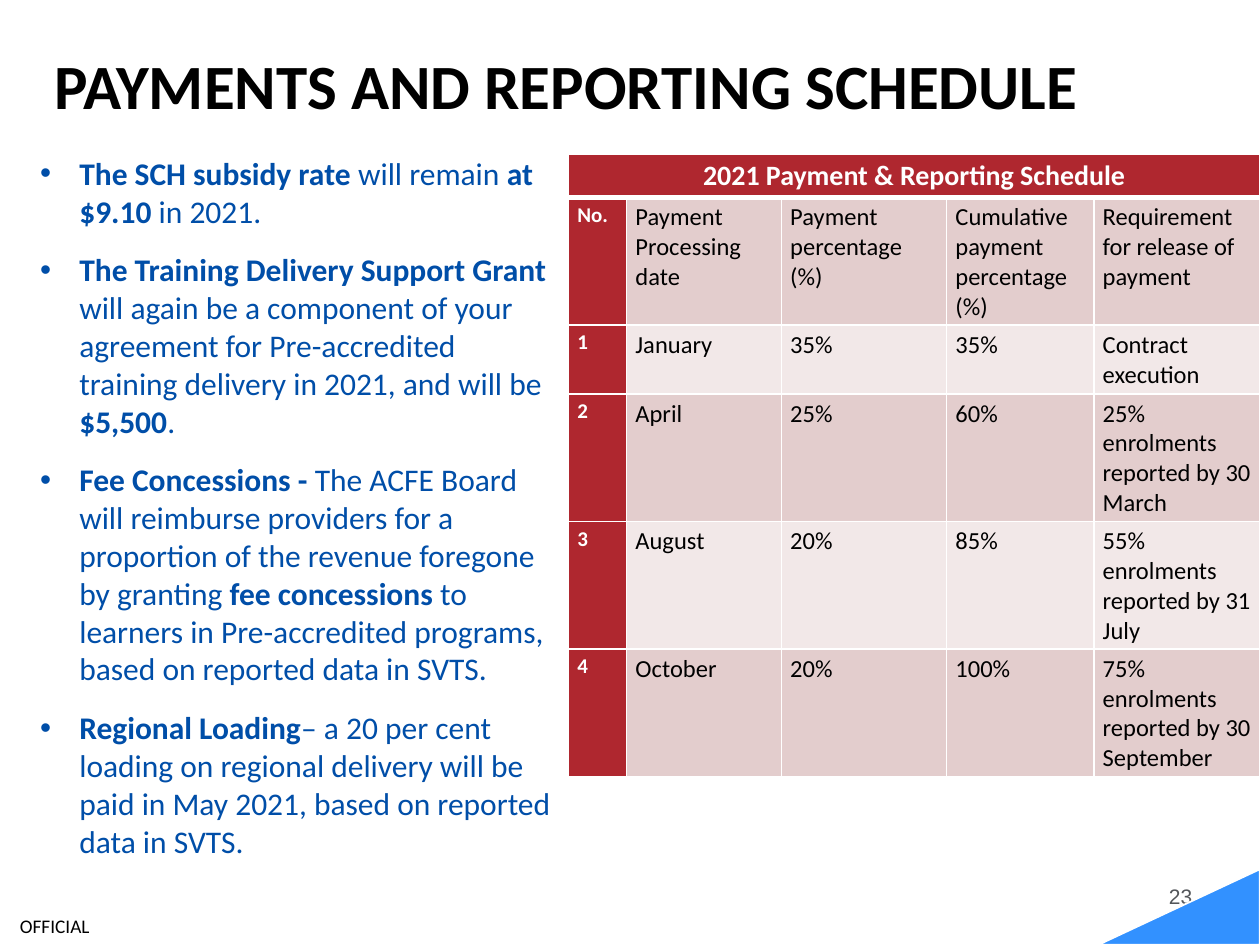
from itertools import cycle

from lxml import etree
from pptx import Presentation
from pptx import util as u
from pptx.dml import color
from pptx.enum import shapes, text
from pptx.oxml import ns

BLACK, WHITE, GREY = "000000", "FFFFFF", "53565A"
BLUE, SKY, RED = "004EA8", "3291FF", "AF272F"
BANDS = ("E3CDCD", "F2E8E8")
LEFT, CENTER = text.PP_ALIGN.LEFT, text.PP_ALIGN.CENTER
TOP, MIDDLE = text.MSO_ANCHOR.TOP, text.MSO_ANCHOR.MIDDLE

# Text styles of the table cells
HEADING = {"size": 16, "fill": WHITE, "bold": True, "align": CENTER}
NUMBER = {"size": 12, "fill": WHITE, "bold": True}
BODY = {"size": 14}

# Runs alternate between bold and regular, starting with bold
BULLETS = [
    ["The SCH subsidy rate ", "will remain ", "at $9.10 ", "in 2021."],
    ["The Training Delivery Support Grant ",
     "will again be a component of your agreement for Pre-accredited "
     "training delivery in 2021, and will be ", "$5,500", "."],
    ["Fee Concessions - ",
     "The ACFE Board will reimburse providers for a proportion of the "
     "revenue foregone by granting ", "fee concessions",
     " to learners in Pre-accredited programs, based on reported data in SVTS."],
    ["Regional Loading",
     "– a 20 per cent loading on regional delivery will be paid in May 2021, "
     "based on reported data in SVTS."],
]

SCHEDULE = [
    ["No.", "Payment Processing date", "Payment percentage (%)",
     "Cumulative payment percentage (%)", "Requirement for release of payment"],
    ["1", "January", "35%", "35%", "Contract execution"],
    ["2", "April", "25%", "60%", "25% enrolments reported by 30 March"],
    ["3", "August", "20%", "85%", "55% enrolments reported by 31 July"],
    ["4", "October", "20%", "100%", "75% enrolments reported by 30 September"],
]


def rgb(value):
    return color.RGBColor.from_string(value)


def add_text(p, words, size=18, fill=BLACK, bold=False, font="Calibri", align=LEFT):
    p.alignment = align
    r = p.add_run()
    r.text = words
    r.font.name, r.font.size, r.font.bold = font, u.Pt(size), bold
    r.font.color.rgb = rgb(fill)


def add_bullet(p, indent):
    pPr = p._p.get_or_add_pPr()
    pPr.set("marL", str(indent))
    pPr.set("indent", str(-indent))
    etree.SubElement(pPr, ns.qn("a:buFont"), typeface="Arial")
    etree.SubElement(pPr, ns.qn("a:buChar"), char="•")


def set_borders(cell, **widths):
    tcPr = cell._tc.get_or_add_tcPr()
    for side in "LRTB":
        ln = etree.SubElement(tcPr, ns.qn(f"a:ln{side}"), w=str(u.Pt(widths.get(side, 1))))
        fill = etree.SubElement(ln, ns.qn("a:solidFill"))
        etree.SubElement(fill, ns.qn("a:srgbClr"), val=WHITE)


class Deck:
    def __init__(self, prs):
        self.s = prs.slides.add_slide(prs.slide_layouts[6])

    def box(self, x, y, w, h, anchor=TOP):
        sp = self.s.shapes.add_textbox(u.Cm(x), u.Cm(y), u.Cm(w), u.Cm(h))
        tf = sp.text_frame
        tf.word_wrap, tf.vertical_anchor = True, anchor
        tf.margin_left = tf.margin_right = tf.margin_top = tf.margin_bottom = 0
        return tf

    def label(self, words, x, y, w, h, anchor=TOP, spacing=1.0, **style):
        p = self.box(x, y, w, h, anchor).paragraphs[0]
        p.line_spacing = spacing
        add_text(p, words, **style)

    def bullets(self, items, x, y, w, h):
        tf = self.box(x, y, w, h)
        for i, parts in enumerate(items):
            p = tf.add_paragraph() if i else tf.paragraphs[0]
            add_bullet(p, u.Cm(0.79))
            p.space_before, p.space_after = u.Pt(6 if i else 0), u.Pt(6)
            for words, bold in zip(parts, cycle([True, False])):
                add_text(p, words, fill=BLUE, bold=bold)

    def cell(self, cell, words, shade, borders, **style):
        cell.margin_left = cell.margin_right = u.Cm(0.18)
        cell.margin_top = cell.margin_bottom = u.Cm(0.1)
        set_borders(cell, **borders)
        cell.fill.solid()
        cell.fill.fore_color.rgb = rgb(shade)
        add_text(cell.text_frame.paragraphs[0], words, **style)

    def table(self, heading, rows, x, y, widths, heights):
        table = self.s.shapes.add_table(
            len(heights), len(widths), u.Cm(x), u.Cm(y),
            u.Cm(sum(widths)), u.Cm(sum(heights))).table
        for col, w in zip(table.columns, widths):
            col.width = u.Cm(w)
        for row, h in zip(table.rows, heights):
            row.height = u.Cm(h)
        # Merged heading row
        head = table.cell(0, 0)
        head.merge(table.cell(0, len(widths) - 1))
        self.cell(head, heading, RED, {"B": 3}, **HEADING)
        # Number column in red, the rest in alternating bands
        for i, (row, band) in enumerate(zip(rows, cycle(BANDS)), 1):
            borders = {"T": 3} if i == 1 else {}
            for j, words in enumerate(row):
                shade, style = (band, BODY) if j else (RED, NUMBER)
                self.cell(table.cell(i, j), words, shade, borders, **style)

    def triangle(self, x, y, w, h, rotation):
        sp = self.s.shapes.add_shape(shapes.MSO_SHAPE.RIGHT_TRIANGLE,
                                     u.Cm(x), u.Cm(y), u.Cm(w), u.Cm(h))
        sp.rotation, sp.shadow.inherit = rotation, False
        sp.fill.solid()
        sp.fill.fore_color.rgb = rgb(SKY)
        sp.line.color.rgb, sp.line.width = rgb(WHITE), u.Pt(1)


def main():
    prs = Presentation()
    prs.slide_width, prs.slide_height = u.Cm(25.4), u.Cm(19.05)
    deck = Deck(prs)

    # Footer
    deck.label("23", 23.19, 17.55, 1.22, 1.02, MIDDLE,
               size=12, fill=GREY, font="Arial", align=CENTER)
    deck.label("OFFICIAL", 0, 18.26, 2.21, 0.79, MIDDLE, size=11, align=CENTER)

    # Title and bullets
    deck.label("PAYMENTS AND REPORTING SCHEDULE", 1.09, 1.12, 23.57, 1.45,
               spacing=0.9, size=36, bold=True)
    deck.bullets(BULLETS, 0.81, 3.1, 10.34, 13.67)

    # Payment schedule
    deck.table("2021 Payment & Reporting Schedule", SCHEDULE, 11.46, 3.1,
               widths=[1.17, 3.12, 3.33, 2.97, 3.35],
               heights=[0.84, 2.49, 1.35, 2.49, 2.49, 2.49])

    # Corner accent
    deck.triangle(23.01, 16.66, 1.52, 3.25, rotation=270)
    prs.save("out.pptx")


if __name__ == "__main__":
    main()
